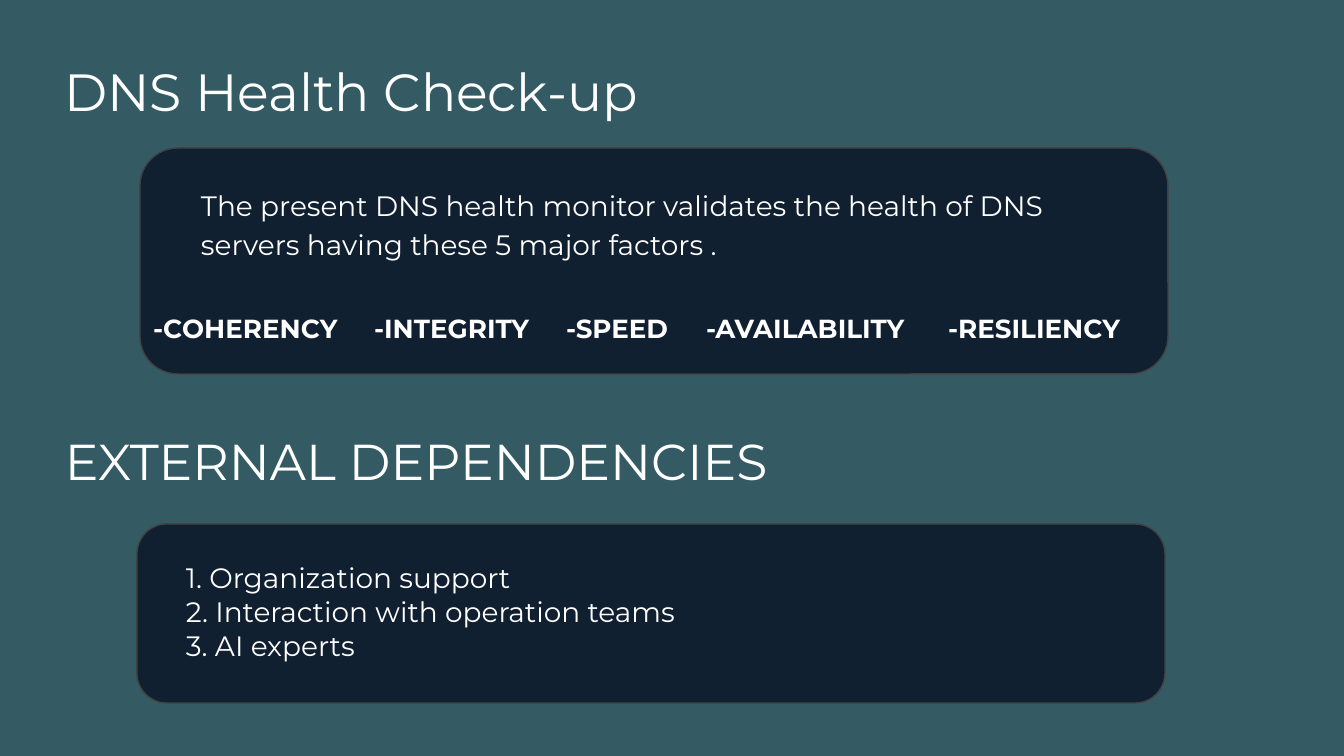
from lxml.etree import SubElement
from pptx import Presentation
from pptx.dml.color import RGBColor
from pptx.enum.shapes import MSO_SHAPE
from pptx.enum.text import MSO_ANCHOR, MSO_AUTO_SIZE, PP_ALIGN
from pptx.oxml.ns import qn
from pptx.util import Pt

EMU_PER_PX = 914400 / 134.4
COLORS = {"background": "345B63", "panel": "112031", "border": "424242", "text": "FFFFFF"}
FONT = "Montserrat"
INSET = 13

INTRO = ("The present DNS health monitor validates the health of DNS "
         "servers having these 5 major factors .")
FACTORS = ["-COHERENCY", "-INTEGRITY", "-SPEED", "-AVAILABILITY", "-RESILIENCY"]
FACTOR_STOPS = [221, 413, 553, 795]
DEPENDENCIES = ["1. Organization support", "2. Interaction with operation teams", "3. AI experts"]


def px(length):
    return round(length * EMU_PER_PX)


def color(name):
    return RGBColor.from_string(COLORS[name])


def add_tab_stops(para, stops):
    """Set left tab stops, measured from the left edge of the text."""
    tab_list = SubElement(para._p.get_or_add_pPr(), qn("a:tabLst"))
    for stop in stops:
        SubElement(tab_list, qn("a:tab"), pos=str(px(stop)), algn="l")


def write_text(box, lines, size, bold=False, spacing=1.0, inset_y=INSET, stops=()):
    frame = box.text_frame
    frame_format = {
        "word_wrap": True,
        "auto_size": MSO_AUTO_SIZE.NONE,
        "vertical_anchor": MSO_ANCHOR.TOP,
        "margin_left": px(INSET),
        "margin_right": px(INSET),
        "margin_top": px(inset_y),
        "margin_bottom": px(inset_y),
    }
    for name, value in frame_format.items():
        setattr(frame, name, value)
    frame.text = "\n".join(lines)
    for para in frame.paragraphs:
        para.alignment = PP_ALIGN.LEFT
        para.line_spacing = spacing
        if stops:
            add_tab_stops(para, stops)
        for span in para.runs:
            for name, value in {"name": FONT, "size": Pt(size), "bold": bold}.items():
                setattr(span.font, name, value)
            span.font.color.rgb = color("text")


def add_text(page, left, top, width, height, lines, size, **text_format):
    box = page.shapes.add_textbox(px(left), px(top), px(width), px(height))
    write_text(box, lines, size, **text_format)


def add_title(page, left, top, width, height, text, size):
    title = page.shapes.title
    place = {"left": left, "top": top, "width": width, "height": height}
    for name, value in place.items():
        setattr(title, name, px(value))
    write_text(title, [text], size)


def add_panel(page, left, top, width, height):
    panel = page.shapes.add_shape(
        MSO_SHAPE.ROUNDED_RECTANGLE, px(left), px(top), px(width), px(height))
    panel.adjustments[0] = 0.167
    panel.shadow.inherit = False
    panel.fill.solid()
    panel.fill.fore_color.rgb = color("panel")
    panel.line.color.rgb = color("border")
    panel.line.width = Pt(0.75)


def main():
    deck = Presentation()
    deck.slide_width, deck.slide_height = px(1344), px(756)
    page = deck.slides.add_slide(deck.slide_layouts[5])
    page.background.fill.solid()
    page.background.fill.fore_color.rgb = color("background")

    add_title(page, 51, 46, 645, 90, "DNS Health Check-up", 28)
    add_panel(page, 140, 148, 1028, 226)
    add_text(page, 188, 171, 926, 134, [INTRO], 15, spacing=1.15)
    add_text(page, 140, 305, 1136, 77, ["\t".join(FACTORS)], 14,
             bold=True, inset_y=7, stops=FACTOR_STOPS)

    add_text(page, 52, 417, 808, 89, ["EXTERNAL DEPENDENCIES"], 27)
    add_panel(page, 137, 524, 1028, 179)
    add_text(page, 173, 548, 926, 198, DEPENDENCIES, 15)

    deck.save("out.pptx")


if __name__ == "__main__":
    main()
